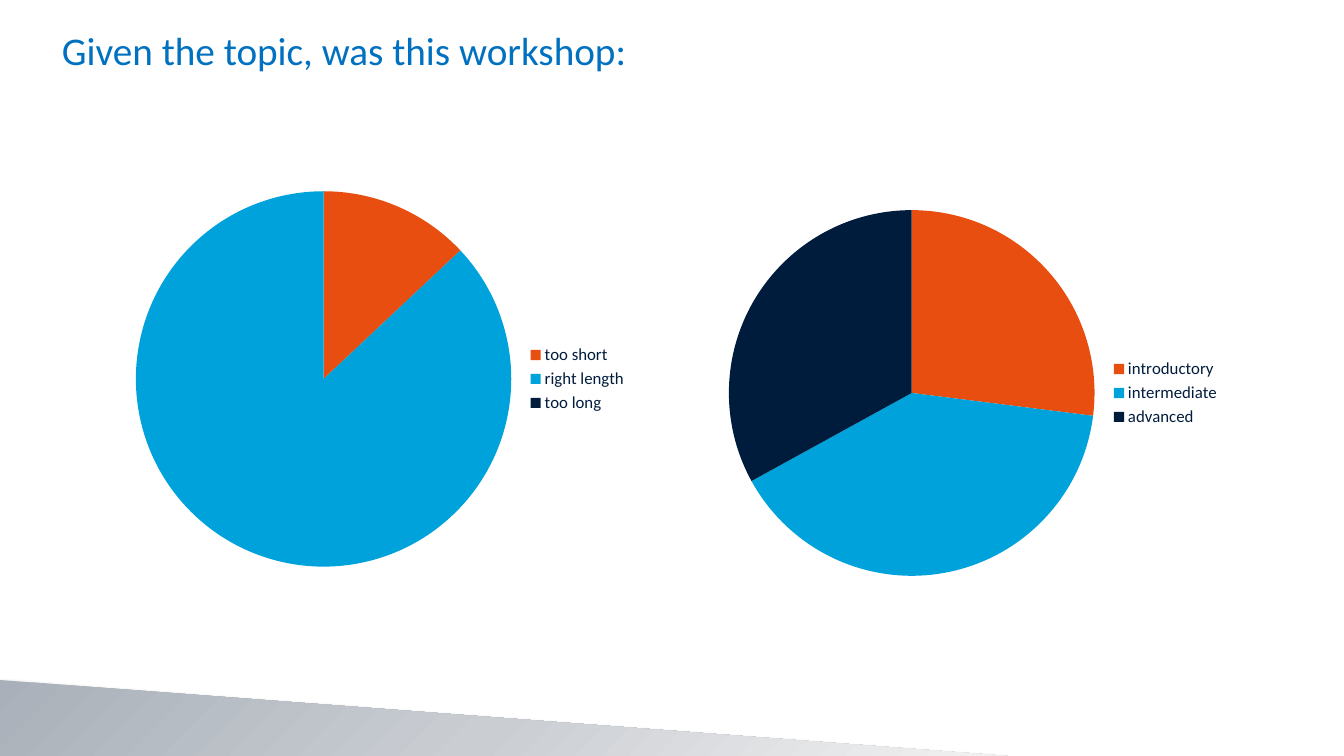
from dataclasses import dataclass

from pptx import Presentation
from pptx.chart.data import CategoryChartData
from pptx.dml.color import RGBColor
from pptx.enum.chart import XL_CHART_TYPE, XL_LEGEND_POSITION
from pptx.enum.shapes import MSO_SHAPE
from pptx.enum.text import MSO_ANCHOR
from pptx.oxml import parse_xml
from pptx.oxml.ns import nsdecls
from pptx.util import Emu, Pt

PIE = XL_CHART_TYPE.PIE
LEGEND_RIGHT = XL_LEGEND_POSITION.RIGHT
RIGHT_TRIANGLE = MSO_SHAPE.RIGHT_TRIANGLE
TOP = MSO_ANCHOR.TOP

EMU_PER_PX = 914400 / 100.8
PIE_SIDE = 516


@dataclass(frozen=True)
class Theme:
    title: str = "0070C0"
    text: str = "001C3D"
    slices: tuple = ("E84E10", "00A2DB", "001C3D")
    wedge_stops: tuple = ((0, "A9B0B9"), (50, "CACED3"), (100, "F2F2F2"))
    font: str = "Calibri"
    title_size: int = 28
    chart_size: int = 10
    legend_size: int = 12


THEME = Theme()


def px(*lengths):
    return [Emu(round(length * EMU_PER_PX)) for length in lengths]


def style_font(font, size, color, name=THEME.font):
    font.size = Pt(size)
    font.name = name
    font.color.rgb = RGBColor.from_string(color)


def add_wedge(page, left, top, width, height):
    wedge = page.shapes.add_shape(RIGHT_TRIANGLE, *px(left, top, width, height))
    wedge.line.fill.background()
    properties = wedge.fill._xPr
    stops = "".join(
        f'<a:gs pos="{percent * 1000}"><a:srgbClr val="{color}"/></a:gs>'
        for percent, color in THEME.wedge_stops
    )
    gradient = parse_xml(
        f'<a:gradFill {nsdecls("a")} rotWithShape="1"><a:gsLst>{stops}</a:gsLst>'
        '<a:lin ang="2700000" scaled="0"/></a:gradFill>'
    )
    shadow = parse_xml(
        f'<a:effectLst {nsdecls("a")}>'
        '<a:outerShdw blurRad="50800" dist="25400" dir="5400000" rotWithShape="0">'
        '<a:srgbClr val="000000"><a:alpha val="46000"/></a:srgbClr>'
        "</a:outerShdw></a:effectLst>"
    )
    properties.insert(2, gradient)  # after the transform and the geometry
    properties.append(shadow)


def add_title(page, text, left, top, width, height):
    box = page.shapes.add_textbox(*px(left, top, width, height))
    frame = box.text_frame
    frame.word_wrap = True
    frame.vertical_anchor = TOP
    para = frame.paragraphs[0]
    para.text = text
    style_font(para.font, THEME.title_size, THEME.title)


def add_pie(page, answers, left, top, font_name=THEME.font):
    data = CategoryChartData()
    data.categories = list(answers)
    data.add_series("Series 1", list(answers.values()))
    frame = page.shapes.add_chart(PIE, *px(left, top, PIE_SIDE, PIE_SIDE), data)
    chart = frame.chart
    chart.has_title = False
    style_font(chart.font, THEME.chart_size, THEME.text, font_name)

    chart.has_legend = True
    chart.legend.position = LEGEND_RIGHT
    chart.legend.include_in_layout = False
    style_font(chart.legend.font, THEME.legend_size, THEME.text)

    plot = chart.plots[0]
    plot.vary_by_categories = True
    for index, color in enumerate(THEME.slices):
        fill = plot.series[0].points[index].format.fill
        fill.solid()
        fill.fore_color.rgb = RGBColor.from_string(color)


def main():
    deck = Presentation()
    deck.slide_width, deck.slide_height = px(1344, 756)
    page = deck.slides.add_slide(deck.slide_layouts[6])

    # Footer decoration and heading
    add_wedge(page, 0, 680, 1008, 76)
    add_title(page, "Given the topic, was this workshop:", 52, 21, 1224, 84)

    # Survey answers, in percent
    add_pie(page, {"too short": 13, "right length": 87, "too long": 0}, 122, 121)
    add_pie(page, {"introductory": 27, "intermediate": 40, "advanced": 33},
            715, 135, "Cambria")

    deck.save("out.pptx")


if __name__ == "__main__":
    main()
